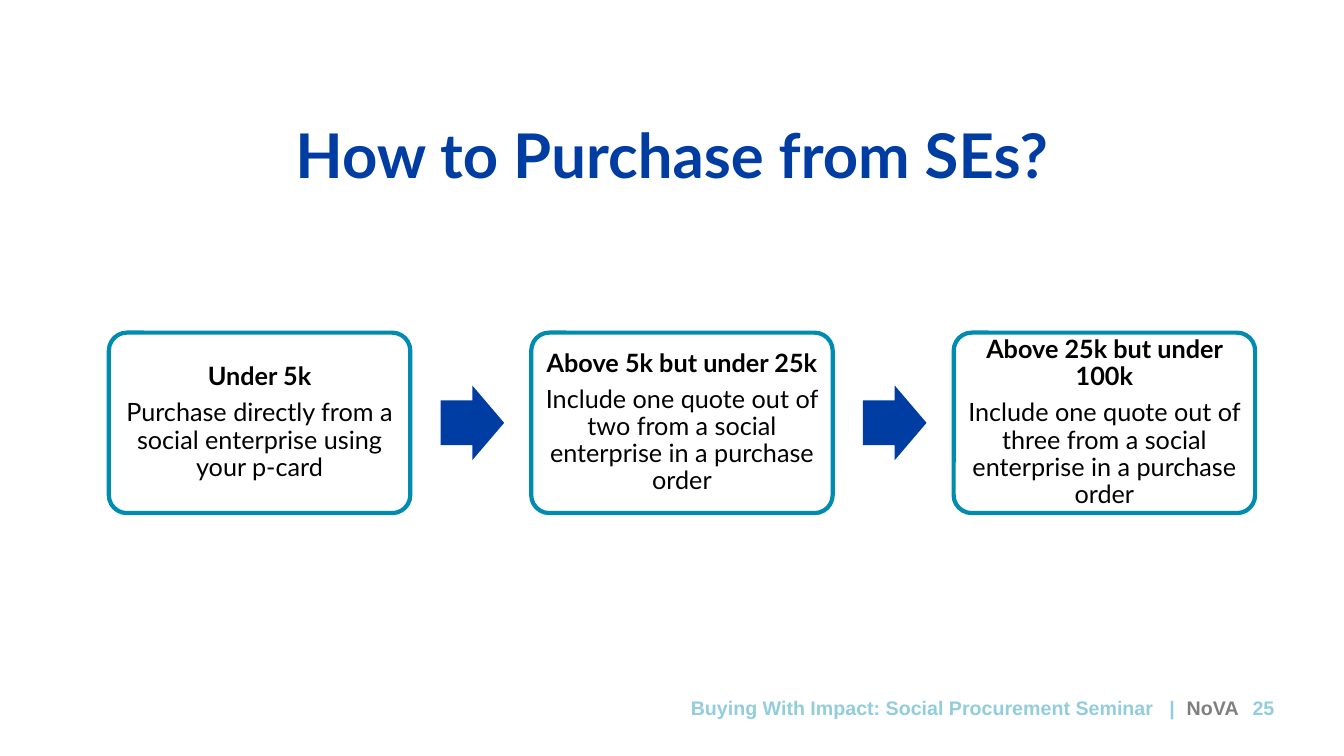
from dataclasses import dataclass

from lxml import etree
from pptx import Presentation
from pptx import util as u
from pptx.dml.color import RGBColor
from pptx.enum import shapes, text
from pptx.oxml import ns


@dataclass(frozen=True)
class Theme:
    navy: str = "003DA3"
    teal: str = "008BB0"
    pale: str = "92CDDC"
    gray: str = "7F7F7F"
    black: str = "000000"
    main: str = "Lato"
    foot: str = "Arial"
    head: int = 44
    body: int = 18
    small: int = 14


class Deck:
    def __init__(self, theme):
        self.theme = theme
        self.prs = Presentation()
        self.prs.slide_width = u.Inches(13.33)
        self.prs.slide_height = u.Inches(7.5)
        self.slide = self.prs.slides.add_slide(self.prs.slide_layouts[6])

    def place(self, area):
        """Turn percent shares of the slide into lengths."""
        wide, high = self.prs.slide_width, self.prs.slide_height
        return [round(part * size / 100)
                for part, size in zip(area, (wide, high, wide, high))]

    def shape(self, kind, area):
        item = self.slide.shapes.add_shape(kind, *self.place(area))
        item.shadow.inherit = False
        return item

    def frame(self, item, side, edge, anchor=text.MSO_ANCHOR.MIDDLE):
        box = item.text_frame
        box.word_wrap = True
        box.vertical_anchor = anchor
        box.margin_left = box.margin_right = u.Inches(side)
        box.margin_top = box.margin_bottom = u.Inches(edge)
        return box

    def run(self, para, words, size, color, bold=True, face=None):
        run = para.add_run()
        run.text = words
        run.font.name = face or self.theme.main
        run.font.size = u.Pt(size)
        run.font.bold = bold
        run.font.color.rgb = RGBColor.from_string(color)

    def title(self, words, area):
        item = self.slide.shapes.add_textbox(*self.place(area))
        para = self.frame(item, 0.1, 0.05).paragraphs[0]
        para.alignment = text.PP_ALIGN.CENTER
        para.line_spacing = 0.9
        self.run(para, words, self.theme.head, self.theme.navy)

    def card(self, head, body, area):
        item = self.shape(shapes.MSO_SHAPE.ROUNDED_RECTANGLE, area)
        item.adjustments[0] = 0.1
        item.fill.background()
        item.line.color.rgb = RGBColor.from_string(self.theme.teal)
        item.line.width = u.Pt(3)
        box = self.frame(item, 0.07, 0.07)
        first, second = box.paragraphs[0], box.add_paragraph()
        second.space_before = u.Pt(6.3)
        for para, words, bold in ((first, head, True), (second, body, False)):
            para.alignment = text.PP_ALIGN.CENTER
            para.line_spacing = 0.9
            self.run(para, words, self.theme.body, self.theme.black, bold)

    def arrow(self, area):
        item = self.shape(shapes.MSO_SHAPE.RIGHT_ARROW, area)
        item.adjustments[0] = 0.6
        item.adjustments[1] = 0.5
        item.fill.solid()
        item.fill.fore_color.rgb = RGBColor.from_string(self.theme.navy)
        item.line.fill.background()

    def footer(self, parts, stops, area):
        """Set the parts on one line, each after the first at a tab stop."""
        item = self.slide.shapes.add_textbox(*self.place(area))
        para = self.frame(item, 0, 0.05, text.MSO_ANCHOR.TOP).paragraphs[0]
        para.alignment = text.PP_ALIGN.LEFT
        tabs = etree.SubElement(para._p.get_or_add_pPr(), ns.qn("a:tabLst"))
        for stop in stops:
            pos = round(stop * self.prs.slide_width / 100)
            etree.SubElement(tabs, ns.qn("a:tab"), pos=str(pos), algn="l")
        for num, (words, color) in enumerate(parts):
            self.run(para, "\t" + words if num else words,
                     self.theme.small, color, face=self.theme.foot)


STEPS = [
    ("Under 5k",
     "Purchase directly from a social enterprise using your p-card"),
    ("Above 5k but under 25k",
     "Include one quote out of two from a social enterprise "
     "in a purchase order"),
    ("Above 25k but under 100k",
     "Include one quote out of three from a social enterprise "
     "in a purchase order"),
]


def main():
    theme = Theme()
    deck = Deck(theme)
    deck.footer([("Buying With Impact: Social Procurement Seminar", theme.pale),
                 ("|", theme.pale), ("NoVA", theme.gray), ("25", theme.pale)],
                (35.6, 36.9, 41.8), (51.4, 91.33, 45, 3.47))
    deck.title("How to Purchase from SEs?", (4.28, 12.67, 91.45, 16.53))

    left, top, wide, high = 8.1, 44, 22.43, 23.87
    pitch, gap = 31.43, 2.25
    tip, tall = 4.73, 9.87
    for num, (head, body) in enumerate(STEPS):
        start = left + num * pitch
        deck.card(head, body, (start, top, wide, high))
        if num < len(STEPS) - 1:
            deck.arrow((start + wide + gap, top + (high - tall) / 2, tip, tall))
    deck.prs.save("out.pptx")


if __name__ == "__main__":
    main()
